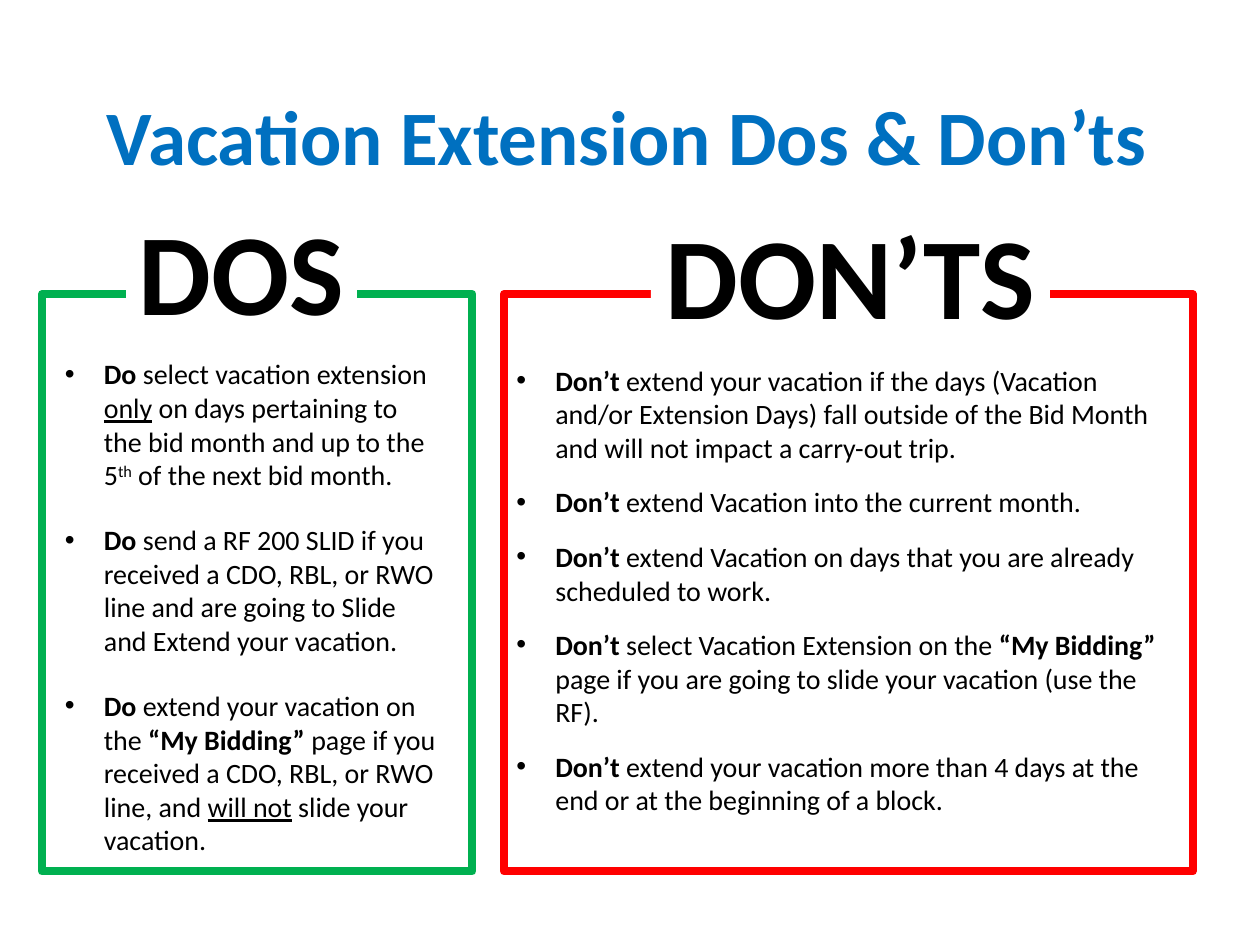
from lxml import etree
from pptx import Presentation
from pptx import util as u
from pptx.dml.color import RGBColor
from pptx.enum import shapes, text
from pptx.oxml.ns import qn

BLUE = RGBColor(0x00, 0x70, 0xC0)
GREEN = RGBColor(0x00, 0xB0, 0x50)
RED = RGBColor(0xFF, 0x00, 0x00)
BLACK = RGBColor(0x00, 0x00, 0x00)
WHITE = RGBColor(0xFF, 0xFF, 0xFF)

COLUMNS, ROWS = 120, 90
BOLD, UNDERLINE, SUPERSCRIPT = {"bold": True}, {"underline": True}, {"baseline": 30}

# Each item is a list of (text, format) runs
DOS = [
    [("Do", BOLD), (" select vacation extension ", {}), ("only", UNDERLINE),
     (" on days pertaining to the bid month and up to the 5", {}),
     ("th", SUPERSCRIPT), (" of the next bid month.", {})],
    [("Do", BOLD), (" send a RF 200 SLID if you received a CDO, RBL, or RWO line "
                    "and are going to Slide and Extend your vacation.", {})],
    [("Do", BOLD), (" extend your vacation on the ", {}), ("“My Bidding” ", BOLD),
     ("page if you received a CDO, RBL, or RWO line, and ", {}),
     ("will not", UNDERLINE), (" slide your vacation.", {})],
]
DONTS = [
    [("Don’t", BOLD), (" extend your vacation if the days (Vacation and/or Extension Days) "
                       "fall outside of the Bid Month and will not impact a carry-out trip.", {})],
    [("Don’t", BOLD), (" extend Vacation into the current month.", {})],
    [("Don’t", BOLD), (" extend Vacation on days that you are already scheduled to work.", {})],
    [("Don’t", BOLD), (" select Vacation Extension on the ", {}), ("“My Bidding”", BOLD),
     (" page if you are going to slide your vacation (use the RF).", {})],
    [("Don’t", BOLD), (" extend your vacation more than 4 days at the end "
                       "or at the beginning of a block.", {})],
]


def add_run(paragraph, words, size=16, color=BLACK, bold=False, underline=False,
            baseline=0, name="Calibri"):
    run = paragraph.add_run()
    run.text = words
    run.font.name, run.font.size = name, u.Pt(size)
    run.font.bold, run.font.underline = bold, underline
    run.font.color.rgb = color
    if baseline:
        run.font._element.set("baseline", str(baseline * 1000))


class SlideBuilder:
    def __init__(self, presentation):
        self.slide = presentation.slides.add_slide(presentation.slide_layouts[6])
        self.column = presentation.slide_width / COLUMNS
        self.row = presentation.slide_height / ROWS

    def place(self, left, top, width, height):
        return (round(left * self.column), round(top * self.row),
                round(width * self.column), round(height * self.row))

    def text_box(self, *area):
        frame = self.slide.shapes.add_textbox(*self.place(*area)).text_frame
        frame.word_wrap = True
        return frame

    def title(self, words, *area):
        frame = self.text_box(*area)
        frame.vertical_anchor = text.MSO_ANCHOR.MIDDLE
        add_run(frame.paragraphs[0], words, size=44, color=BLUE, bold=True)

    def panel(self, *area, line=None):
        shape = self.slide.shapes.add_shape(shapes.MSO_SHAPE.RECTANGLE, *self.place(*area))
        shape.shadow.inherit = False
        shape.fill.solid()
        shape.fill.fore_color.rgb = WHITE
        if line is None:
            shape.line.fill.background()
        else:
            shape.line.color.rgb = line
            shape.line.width = u.Pt(4.5)
        return shape

    def heading(self, words, *area):
        frame = self.panel(*area).text_frame
        frame.word_wrap = True
        frame.vertical_anchor = text.MSO_ANCHOR.MIDDLE
        paragraph = frame.paragraphs[0]
        paragraph.alignment = text.PP_ALIGN.CENTER
        add_run(paragraph, words, size=66, bold=True)

    def bullets(self, items, *area, gap):
        frame = self.text_box(*area)
        for index, runs in enumerate(items):
            paragraph = frame.add_paragraph() if index else frame.paragraphs[0]
            properties = paragraph._p.get_or_add_pPr()
            indent = u.Inches(0.31)
            properties.set("marL", str(indent))
            properties.set("indent", str(-indent))
            etree.SubElement(properties, qn("a:buFont"), typeface="Arial")
            etree.SubElement(properties, qn("a:buChar"), char="•")
            if index:
                paragraph.space_before = u.Pt(gap)
            for words, style in runs:
                add_run(paragraph, words, **style)


def main():
    presentation = Presentation()
    presentation.slide_width, presentation.slide_height = u.Inches(10), u.Inches(7.5)
    builder = SlideBuilder(presentation)

    builder.title("Vacation Extension Dos & Don’ts", 9, 7, 114, 11.6)

    # Outlined panels
    builder.panel(4, 28, 41, 55, line=GREEN)
    builder.panel(48, 28, 65.6, 55, line=RED)

    # Headings that interrupt the top outlines
    builder.heading("DOS", 12, 18.4, 22, 14.5)
    builder.heading("DON’TS", 62, 18.8, 38, 14.5)

    # Rule lists
    builder.bullets(DOS, 5, 33.4, 38, 49.3, gap=18)
    builder.bullets(DONTS, 48, 34, 65.3, 51.1, gap=12)

    presentation.save("out.pptx")


if __name__ == "__main__":
    main()
